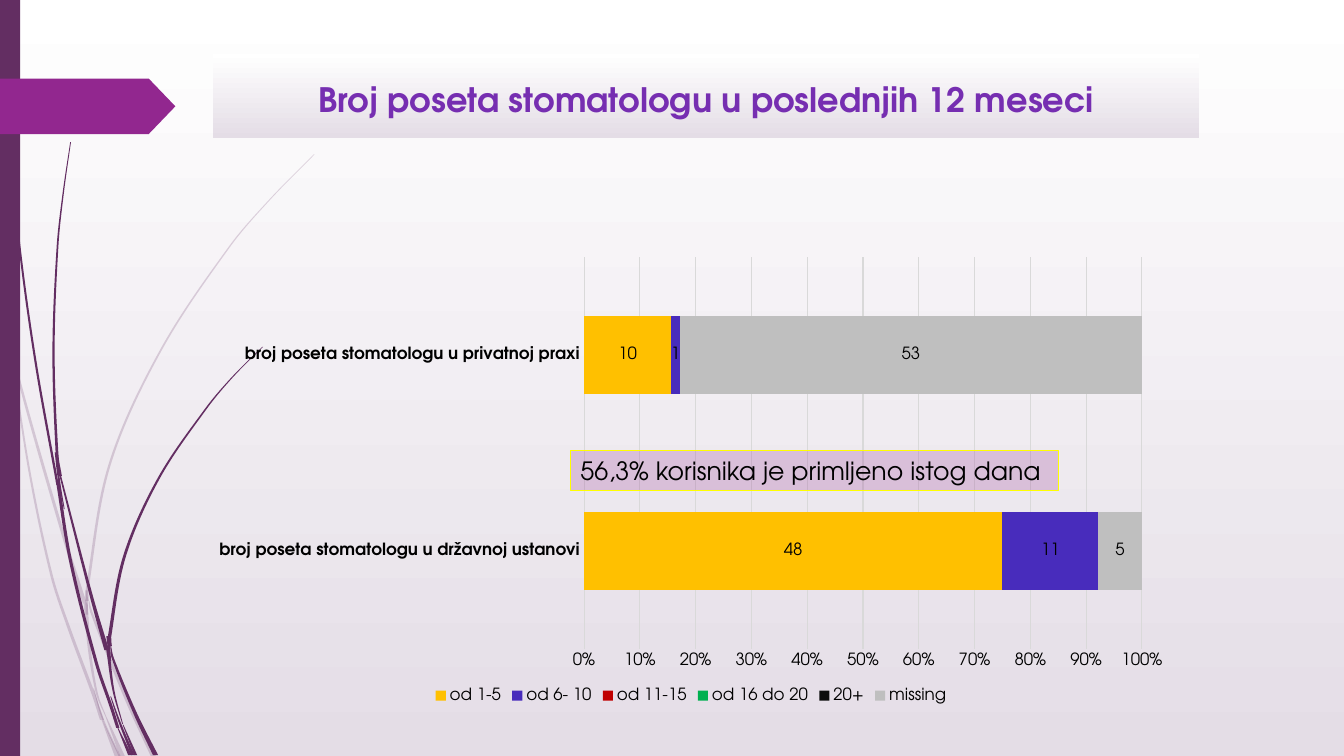
from math import dist

from pptx import Presentation
from pptx.chart.data import CategoryChartData
from pptx.dml.color import RGBColor
from pptx.enum.chart import XL_CHART_TYPE, XL_LABEL_POSITION, XL_LEGEND_POSITION, XL_TICK_MARK
from pptx.enum.shapes import MSO_SHAPE
from pptx.enum.text import MSO_ANCHOR, MSO_AUTO_SIZE, PP_ALIGN
from pptx.oxml import parse_xml
from pptx.oxml.ns import nsdecls, qn
from pptx.util import Cm, Pt

FACE, PLUM, GRID = "TeX Gyre Adventor", "632E62", "D9D9D9"

# Blades of grass in cm: width at the tip, width at the root, points between
FAINT = [
    (0.06, 0.02, [(0.03, 7.16), (0.23, 8.18), (0.28, 8.89)]),
    (0.04, 0.1, [(0.36, 8.76), (0.41, 9.3), (1.52, 13.23), (2.14, 15.21)]),
    (0.02, 0.13, [(2.24, 15.14), (2.3, 15.42), (3.18, 17.6), (3.87, 19.07)]),
    (0.02, 0.13, [(2.67, 18.06), (3.09, 19.07)]),
    (0.04, 0.1, [(0.28, 8.89), (0.75, 11.92), (1.3, 14.5), (1.71, 15.75), (2.35, 17.48),
                 (2.57, 18.14)]),
    (0.1, 0.02, [(2.16, 15.21), (2.26, 16.41), (2.45, 17.5), (2.67, 18.06)]),
    (0.02, 0.08, [(7.92, 3.89), (6.81, 5.02), (5.79, 6.21), (4.04, 8.85), (2.76, 11.72),
                  (2.2, 14.83), (2.2, 15.14)]),
    (0.02, 0.13, [(2.57, 18.14), (2.96, 19.07)]),
    (0.06, 0.06, [(2.18, 14.88), (2.19, 15.49)]),
    (0.02, 0.05, [(2.36, 17.35), (2.57, 18.06), (3.02, 19.07)]),
]
DARK = [
    (0.03, 0.06, [(0.09, 0), (0.15, 1.22), (0.19, 2.79), (0.46, 5.92), (0.88, 9.02),
                  (1.45, 12.22)]),
    (0.04, 0.12, [(1.52, 11.99), (2.3, 15.01), (2.69, 16.38)]),
    (0.02, 0.13, [(2.79, 16.28), (2.84, 16.58), (3.4, 17.96), (3.92, 19.03)]),
    (0.08, 0.08, [(1.45, 12.12), (1.78, 14.14), (2.43, 16.71), (2.8, 17.8), (2.97, 18.34)]),
    (0.02, 0.08, [(1.78, 3.58), (1.59, 4.9), (1.45, 6.22), (1.35, 8.86), (1.44, 11.46),
                  (1.52, 11.99)]),
    (0.02, 0.08, [(3.1, 18.26), (3.42, 19.03)]),
    (0.08, 0.02, [(1.42, 11.4), (1.48, 12.04), (1.62, 12.83)]),
    (0.02, 0.1, [(6.62, 8.74), (5.87, 9.49), (5.19, 10.3), (3.99, 12.07), (3.14, 14.01),
                 (2.76, 16.05), (2.77, 16.28)]),
    (0.02, 0.1, [(2.97, 18.34), (3.28, 19.03)]),
    (0.08, 0.02, [(2.72, 16.38), (2.86, 17.4), (3.09, 18.24)]),
    (0.08, 0.04, [(2.72, 16.03), (2.78, 16.66)]),
    (0.02, 0.08, [(2.79, 17.55), (3.0, 18.16), (3.35, 19.03)]),
]

CATS = ["broj poseta stomatologu u državnoj ustanovi", "broj poseta stomatologu u privatnoj praxi"]
SERIES = [
    ("od 1-5", (48, 10), "FFC000"),
    ("od 6- 10", (11, 1), "482CBC"),
    ("od 11-15", (None, None), "C00000"),
    ("od 16 do 20", (None, None), "00B050"),
    ("20+", (None, None), "0D0D0D"),
    ("missing", (5, 53), "BFBFBF"),
]


def rgb(code):
    return RGBColor.from_string(code)


def apply(item, **vals):
    for name, val in vals.items():
        setattr(item, name, val)


def style(font, size, color="000000", bold=False):
    apply(font, name=FACE, size=Pt(size), bold=bold)
    font.color.rgb = rgb(color)


def paint(fill, color):
    fill.solid()
    fill.fore_color.rgb = rgb(color)


def fade(fill):
    """White at the top, pale mauve at the foot."""
    fill.gradient()
    fill.gradient_angle = 270
    for stop, color, pos in zip(fill.gradient_stops, ("FFFFFF", "E4DDE6"), (0, 1)):
        stop.color.rgb = rgb(color)
        stop.position = pos


def sheer(shape, share):
    """Make a solid fill show only the given percent."""
    tint = shape.element.spPr.find(qn("a:solidFill")).find(qn("a:srgbClr"))
    tint.append(parse_xml(f'<a:alpha {nsdecls("a")} val="{share * 1000}"/>'))


def plain(shape, color):
    shape.shadow.inherit = False
    paint(shape.fill, color)
    shape.line.fill.background()
    return shape


def block(slide, kind, box, color):
    return plain(slide.shapes.add_shape(kind, *map(Cm, box)), color)


def bend(pts):
    """Bezier handles and end point for each step of a smooth line."""
    slopes = []
    for a, b, c in zip([pts[0], *pts], pts, [*pts[1:], pts[-1]]):
        span = dist(a, b) + dist(b, c)
        slopes.append([(q - p) / span for p, q in zip(a, c)])
    for a, b, s, t in zip(pts, pts[1:], slopes, slopes[1:]):
        arm = dist(a, b) / 3
        yield ([p + u * arm for p, u in zip(a, s)], [p - u * arm for p, u in zip(b, t)], b)


def blade(slide, tip, root, pts):
    last = len(pts) - 1
    half = [(tip + (root - tip) * i / last) / 2 for i in range(last + 1)]
    left = [(x - h, y) for (x, y), h in zip(pts, half)]
    right = [(x + h, y) for (x, y), h in zip(pts, half)][::-1]
    edge = [(Cm(x), Cm(y)) for x, y in left + right]
    pen = slide.shapes.build_freeform(*edge[0])
    pen.add_line_segments(edge[1:], close=True)
    shape = plain(pen.convert_to_shape(), PLUM)

    # Turn the straight steps of both long sides into curves
    steps = list(shape.element.iter(qn("a:lnTo")))
    for step, trio in zip(steps[:last] + steps[last + 1:], [*bend(left), *bend(right)]):
        dots = "".join(f'<a:pt x="{Cm(x) - shape.left}" y="{Cm(y) - shape.top}"/>'
                       for x, y in trio)
        curve = parse_xml(f'<a:cubicBezTo {nsdecls("a")}>{dots}</a:cubicBezTo>')
        step.getparent().replace(step, curve)
    return shape


def label(slide, box, text, size, color, bold=False, wrap=True):
    shape = slide.shapes.add_textbox(*map(Cm, box))
    frame = shape.text_frame
    apply(frame, word_wrap=wrap, vertical_anchor=MSO_ANCHOR.TOP)
    run = frame.paragraphs[0].add_run()
    run.text = text
    style(run.font, size, color, bold)
    return shape


def place(chart, x, y, w, h):
    """Fix the inner plot as shares of the chart."""
    area = chart.element.find(".//" + qn("c:plotArea"))
    for old in area.findall(qn("c:layout")):
        area.remove(old)
    keys = dict(layoutTarget="inner", xMode="edge", yMode="edge", x=x, y=y, w=w, h=h)
    vals = "".join(f'<c:{key} val="{val}"/>' for key, val in keys.items())
    area.insert(0, parse_xml(f'<c:layout {nsdecls("c")}><c:manualLayout>{vals}'
                             '</c:manualLayout></c:layout>'))


def bars(slide, box, inner):
    data = CategoryChartData()
    data.categories = CATS
    for name, vals, _ in SERIES:
        data.add_series(name, vals)
    chart = slide.shapes.add_chart(XL_CHART_TYPE.BAR_STACKED_100, *map(Cm, box), data).chart
    apply(chart, has_title=False, has_legend=True)
    style(chart.font, 10)
    place(chart, *(part / full for part, full in zip(inner, box[2:] * 2)))
    # Bars and their values
    plot = chart.plots[0]
    apply(plot, gap_width=150, overlap=100, vary_by_categories=False)
    for ser, (_, _, color) in zip(plot.series, SERIES):
        paint(ser.format.fill, color)
        apply(ser.data_labels, show_value=True, position=XL_LABEL_POSITION.CENTER)
        style(ser.data_labels.font, 12)
    # Axes and legend
    cat, val = chart.category_axis, chart.value_axis
    for axis, bold in ((cat, True), (val, False)):
        apply(axis, major_tick_mark=XL_TICK_MARK.NONE, minor_tick_mark=XL_TICK_MARK.NONE)
        style(axis.tick_labels.font, 12, bold=bold)
    apply(val, has_major_gridlines=True, major_unit=0.1)
    apply(val.tick_labels, number_format="0%", number_format_is_linked=False)
    val.format.line.fill.background()
    for line in (cat.format.line, val.major_gridlines.format.line):
        line.color.rgb = rgb(GRID)
        line.width = Pt(0.75)
    apply(chart.legend, position=XL_LEGEND_POSITION.BOTTOM, include_in_layout=False)
    style(chart.legend.font, 12)


def main():
    deck = Presentation()
    apply(deck, slide_width=Cm(33.87), slide_height=Cm(19.05))
    slide = deck.slides.add_slide(deck.slide_layouts[6])
    fade(slide.background.fill)
    # Grass, side bar and arrow
    for part in FAINT:
        sheer(blade(slide, *part), 20)
    for part in DARK:
        blade(slide, *part)
    block(slide, MSO_SHAPE.RECTANGLE, (0, 0, 0.51, 19.05), PLUM)
    arrow = block(slide, MSO_SHAPE.PENTAGON, (0, 1.98, 4.42, 1.4), "92278F")
    arrow.adjustments[0] = 0.48
    # Title
    title = label(slide, (5.36, 1.35, 24.87, 2.13),
                  "Broj poseta stomatologu u poslednjih 12 meseci", 24, "762EB1", bold=True)
    fade(title.fill)
    apply(title.text_frame.paragraphs[0], alignment=PP_ALIGN.CENTER, line_spacing=1.5)
    # Chart and the note over it
    bars(slide, (5.03, 6.22, 24.77, 11.61), (9.69, 0.26, 14.06, 9.88))
    note = label(slide, (14.38, 11.35, 12.29, 1.02), "56,3% korisnika je primljeno istog dana",
                 18, "000000", wrap=False)
    note.text_frame.auto_size = MSO_AUTO_SIZE.SHAPE_TO_FIT_TEXT
    paint(note.fill, "92278F")
    sheer(note, 22)
    note.line.color.rgb = rgb("FFFF00")
    note.line.width = Pt(0.75)
    deck.save("out.pptx")


if __name__ == "__main__":
    main()
